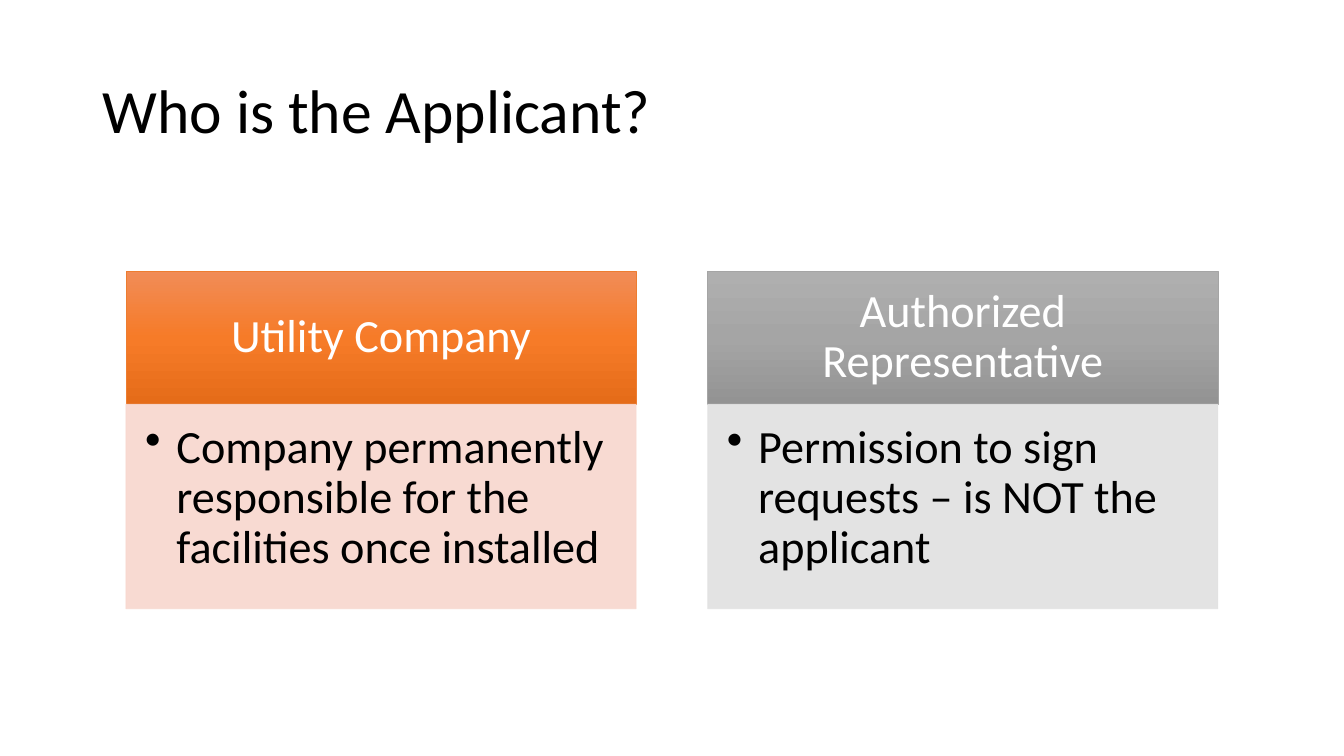
"""Build the slide that tells the applicant from the authorized representative."""
from copy import deepcopy

from pptx import Presentation
from pptx.dml.color import RGBColor
from pptx.enum.shapes import MSO_SHAPE
from pptx.enum.text import MSO_ANCHOR, PP_ALIGN
from pptx.oxml.ns import qn
from pptx.util import Inches, Pt

RECTANGLE = MSO_SHAPE.RECTANGLE
TOP, MIDDLE = MSO_ANCHOR.TOP, MSO_ANCHOR.MIDDLE
LEFT, CENTER = PP_ALIGN.LEFT, PP_ALIGN.CENTER

FONT = "Calibri"
COLORS = {
    "text": "000000",
    "heading": "FFFFFF",
    "orange_top": "F18C57",
    "orange_middle": "F67B28",
    "orange_bottom": "E56C19",
    "orange_edge": "ED7D31",
    "orange_pale": "F8D7CE",
    "gray_top": "AFAFAF",
    "gray_middle": "A5A5A5",
    "gray_bottom": "939393",
    "gray_edge": "A5A5A5",
    "gray_pale": "E1E1E1",
}
ROLES = [
    ("orange", "Utility Company",
     "Company permanently responsible for the facilities once installed"),
    ("gray", "Authorized Representative",
     "Permission to sign requests – is NOT the applicant"),
]
FIRST_LEFT, COLUMN_STEP, COLUMN_WIDTH = 1.25, 5.77, 5.06
HEADING_TOP, HEADING_HEIGHT, DETAIL_HEIGHT = 2.69, 1.32, 2.03
PALE_OPACITY = 90


def rgb(name):
    return RGBColor.from_string(COLORS[name])


def write(frame, text, size, color, anchor, align, insets):
    frame.word_wrap = True
    frame.vertical_anchor = anchor
    (frame.margin_left, frame.margin_top,
     frame.margin_right, frame.margin_bottom) = map(Inches, insets)
    paragraph = frame.paragraphs[0]
    paragraph.alignment = align
    paragraph.line_spacing = 0.9
    run = paragraph.add_run()
    run.text = text
    run.font.name = FONT
    run.font.size = Pt(size)
    run.font.color.rgb = rgb(color)
    return paragraph


def add_title(slide, text):
    title = slide.shapes.add_textbox(
        Inches(0.92), Inches(0.4), Inches(11.5), Inches(1.45))
    write(title.text_frame, text, 44, "text", MIDDLE, LEFT,
          (0.1, 0.05, 0.1, 0.05))


def add_panel(slide, left, top, height, edge):
    panel = slide.shapes.add_shape(
        RECTANGLE, Inches(left), Inches(top),
        Inches(COLUMN_WIDTH), Inches(height))
    panel.shadow.inherit = False
    panel.line.color.rgb = rgb(edge)
    panel.line.width = Pt(0.5)
    return panel


def shade(fill, theme):
    """Fill from top to bottom with the three tones of a theme."""
    fill.gradient()
    fill.gradient_angle = 270
    stop_list = fill._xPr.find(qn("a:gradFill")).find(qn("a:gsLst"))
    stop_list.append(deepcopy(stop_list[0]))
    tones = zip(fill.gradient_stops, ("top", "middle", "bottom"))
    for index, (stop, tone) in enumerate(tones):
        stop.position = index / 2
        stop.color.rgb = rgb(f"{theme}_{tone}")


def add_heading(slide, left, theme, text):
    heading = add_panel(slide, left, HEADING_TOP, HEADING_HEIGHT,
                        f"{theme}_edge")
    shade(heading.fill, theme)
    write(heading.text_frame, text, 33, "heading", MIDDLE, CENTER,
          (0.26, 0.15, 0.26, 0.15))


def add_bullet(paragraph):
    properties = paragraph._p.get_or_add_pPr()
    properties.set("marL", str(Inches(0.31)))
    properties.set("indent", str(Inches(-0.31)))
    bullet = properties.makeelement(qn("a:buChar"), {"char": "•"})
    properties.append(bullet)


def add_detail(slide, left, theme, text):
    pale = f"{theme}_pale"
    detail = add_panel(slide, left, HEADING_TOP + HEADING_HEIGHT,
                       DETAIL_HEIGHT, pale)
    detail.fill.solid()
    detail.fill.fore_color.rgb = rgb(pale)
    for color in detail._element.spPr.iter(qn("a:srgbClr")):
        alpha = color.makeelement(
            qn("a:alpha"), {"val": str(PALE_OPACITY * 1000)})
        color.append(alpha)
    paragraph = write(detail.text_frame, text, 33, "text", TOP, LEFT,
                      (0.19, 0.19, 0.26, 0.29))
    paragraph.level = 1
    add_bullet(paragraph)


def main():
    deck = Presentation()
    deck.slide_width, deck.slide_height = Inches(13.33), Inches(7.5)
    slide = deck.slides.add_slide(deck.slide_layouts[6])
    add_title(slide, "Who is the Applicant?")
    for column, (theme, role, description) in enumerate(ROLES):
        left = FIRST_LEFT + column * COLUMN_STEP
        add_heading(slide, left, theme, role)
        add_detail(slide, left, theme, description)
    deck.save("out.pptx")


if __name__ == "__main__":
    main()
